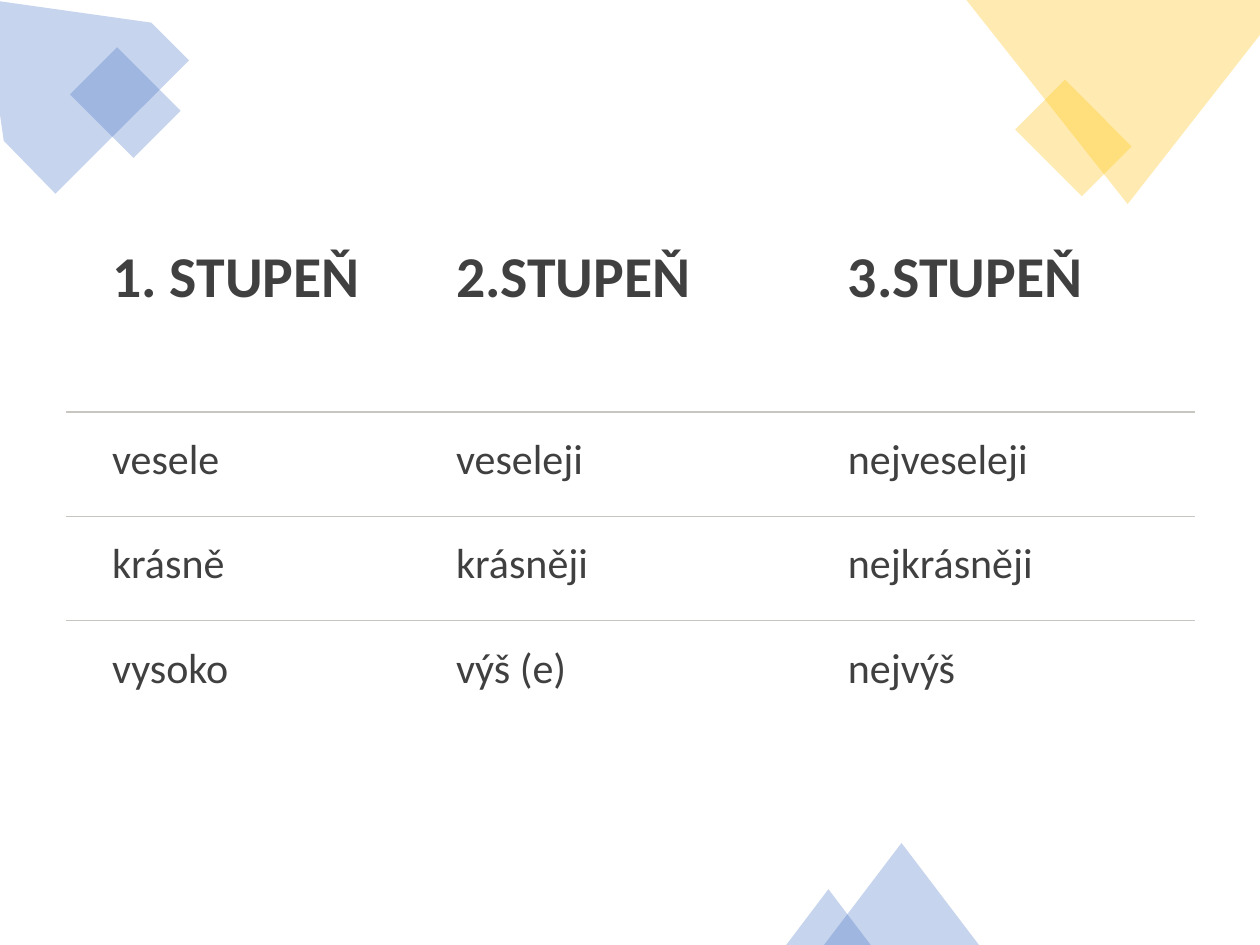
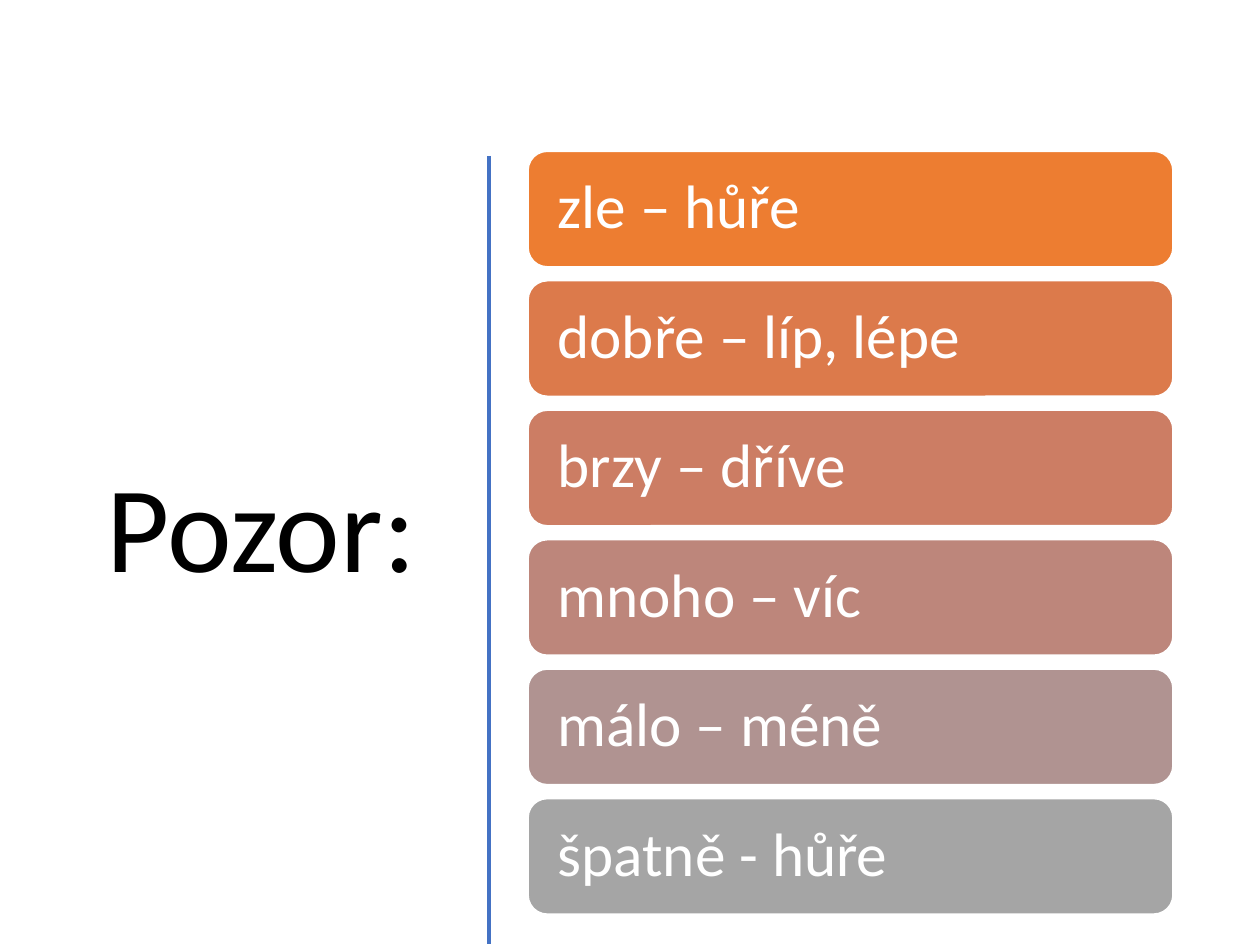
from lxml import etree
from pptx import Presentation
from pptx.dml.color import RGBColor
from pptx.enum.shapes import MSO_CONNECTOR, MSO_SHAPE
from pptx.enum.text import MSO_ANCHOR, PP_ALIGN
from pptx.oxml.ns import qn
from pptx.util import Inches, Pt

SLIDE_WIDTH, SLIDE_HEIGHT = Inches(10), Inches(7.5)
BLANK_LAYOUT = 6
FONT = "Calibri"

BLUE = RGBColor(0x44, 0x72, 0xC4)
GOLD = RGBColor(0xFF, 0xC0, 0x00)
INK = RGBColor(0x40, 0x40, 0x40)
RULE = RGBColor(0xC7, 0xC6, 0xC1)
BLACK = RGBColor(0x00, 0x00, 0x00)
WHITE = RGBColor(0xFF, 0xFF, 0xFF)

RECTANGLE = MSO_SHAPE.RECTANGLE
TRIANGLE = MSO_SHAPE.ISOSCELES_TRIANGLE
ROUNDED = MSO_SHAPE.ROUNDED_RECTANGLE
STRAIGHT = MSO_CONNECTOR.STRAIGHT
MIDDLE = MSO_ANCHOR.MIDDLE
LEFT, RIGHT = PP_ALIGN.LEFT, PP_ALIGN.RIGHT

DEGREES = [
    ["1. STUPEŇ", "2.STUPEŇ", "3.STUPEŇ"],
    ["vesele", "veseleji", "nejveseleji"],
    ["krásně", "krásněji", "nejkrásněji"],
    ["vysoko", "výš (e)", "nejvýš"],
]
EXCEPTIONS = [
    ("zle – hůře", RGBColor(0xED, 0x7D, 0x31)),
    ("dobře – líp, lépe", RGBColor(0xDC, 0x7A, 0x4B)),
    ("brzy – dříve", RGBColor(0xCC, 0x7D, 0x64)),
    ("mnoho – víc", RGBColor(0xBD, 0x86, 0x7B)),
    ("málo – méně", RGBColor(0xB0, 0x93, 0x91)),
    ("špatně - hůře", RGBColor(0xA5, 0xA5, 0xA5)),
]


def across(percent):
    """Length as a percentage of the slide width."""
    return round(SLIDE_WIDTH * percent / 100)


def down(percent):
    """Length as a percentage of the slide height."""
    return round(SLIDE_HEIGHT * percent / 100)


def place(left, top, width, height):
    return across(left), down(top), across(width), down(height)


def write(text_frame, text, size, color, align=LEFT, bold=False, spacing=None):
    text_frame.text = text
    paragraph = text_frame.paragraphs[0]
    paragraph.alignment = align
    paragraph.line_spacing = spacing
    font = paragraph.runs[0].font
    font.name, font.size, font.bold = FONT, Pt(size), bold
    font.color.rgb = color


def tint(shape, color):
    """Fill a decoration with a see-through colour and no outline."""
    shape.shadow.inherit = False
    shape.line.fill.background()
    shape.fill.solid()
    shape.fill.fore_color.rgb = color
    color_node = shape.fill._xPr.find(".//" + qn("a:srgbClr"))
    etree.SubElement(color_node, qn("a:alpha")).set("val", "30000")


def add_decoration(slide, kind, box, color, rotation=0):
    shape = slide.shapes.add_shape(kind, *place(*box))
    shape.rotation = rotation
    tint(shape, color)


def add_corner(slide, points, color):
    (start_x, start_y), *others = [(across(x), down(y)) for x, y in points]
    builder = slide.shapes.build_freeform(start_x, start_y)
    builder.add_line_segments(others, close=True)
    tint(builder.convert_to_shape(), color)


def add_rule(cell, side, position):
    """Draw a thin line on one side (lnT or lnB) of a table cell."""
    line = etree.Element(qn("a:" + side), w=str(Pt(0.75)))
    fill = etree.SubElement(line, qn("a:solidFill"))
    etree.SubElement(fill, qn("a:srgbClr")).set("val", str(RULE))
    cell._tc.get_or_add_tcPr().insert(position, line)


def add_degree_table(slide, rows, box, column_widths, row_heights):
    frame = slide.shapes.add_table(len(rows), len(rows[0]), *place(*box))
    table = frame.table
    table.first_row = table.horz_banding = False
    for column, width in zip(table.columns, column_widths):
        column.width = across(width)
    for row, height in zip(table.rows, row_heights):
        row.height = down(height)
    for row_index, words in enumerate(rows):
        is_header = row_index == 0
        for column_index, word in enumerate(words):
            cell = table.cell(row_index, column_index)
            cell.fill.background()
            cell.margin_left, cell.margin_right = across(3.6), across(2.7)
            cell.margin_top = cell.margin_bottom = down(2.4)
            write(cell.text_frame, word, 33 if is_header else 24, INK, bold=is_header)
            if row_index < len(rows) - 1:
                add_rule(cell, "lnB", 0)
            if not is_header:
                add_rule(cell, "lnT", 0)


def add_title(slide, text, box):
    text_frame = slide.shapes.add_textbox(*place(*box)).text_frame
    text_frame.word_wrap = True
    text_frame.vertical_anchor = MIDDLE
    write(text_frame, text, 70, BLACK, RIGHT, spacing=0.9)


def add_divider(slide, x, top, bottom):
    line = slide.shapes.add_connector(
        STRAIGHT, across(x), down(top), across(x), down(bottom))
    line.line.color.rgb = BLUE
    line.line.width = Pt(2)
    etree.SubElement(line._element.spPr, qn("a:effectLst"))


def add_card(slide, text, color, box):
    card = slide.shapes.add_shape(ROUNDED, *place(*box))
    card.shadow.inherit = False
    card.fill.solid()
    card.fill.fore_color.rgb = color
    card.line.color.rgb = WHITE
    card.line.width = Pt(1)
    text_frame = card.text_frame
    text_frame.word_wrap = True
    text_frame.vertical_anchor = MIDDLE
    text_frame.margin_left = text_frame.margin_right = across(1.9)
    write(text_frame, text, 35, WHITE, spacing=0.9)


def build_degrees_slide(slide):
    # Corner and bottom decorations
    add_corner(slide, [(12, 2.4), (-1.3, -0.1), (0.3, 14.9), (4.4, 20.5), (15, 6.4)], BLUE)
    add_decoration(slide, RECTANGLE, (7.3, 6.1, 5.3, 9.5), BLUE, 315)
    add_decoration(slide, RECTANGLE, (82.4, 9.6, 5.6, 10), GOLD, 315)
    add_corner(slide, [(76.7, 0), (100, 0), (100, 3.7), (89.5, 21.6)], GOLD)
    add_decoration(slide, TRIANGLE, (65.4, 89.2, 12.3, 10.8), BLUE)
    add_decoration(slide, TRIANGLE, (62.4, 94.1, 6.7, 5.9), BLUE)
    # Comparison table
    add_degree_table(slide, DEGREES, (5.3, 23.3, 89.4, 53.4),
                     [27.3, 31.1, 31.1], [20.3] + [11.03] * 3)


def build_exceptions_slide(slide):
    add_title(slide, "Pozor: ", (3.9, 15.6, 32.3, 81.5))
    add_divider(slide, 38.8, 16.5, 99.9)
    # Evenly spaced cards
    first_top, last_top = 16, 84.5
    pitch = (last_top - first_top) / (len(EXCEPTIONS) - 1)
    for index, (text, color) in enumerate(EXCEPTIONS):
        add_card(slide, text, color, (41.9, first_top + index * pitch, 51.2, 12.25))


def main():
    presentation = Presentation()
    presentation.slide_width, presentation.slide_height = SLIDE_WIDTH, SLIDE_HEIGHT
    for build in (build_degrees_slide, build_exceptions_slide):
        build(presentation.slides.add_slide(presentation.slide_layouts[BLANK_LAYOUT]))
    presentation.save("out.pptx")


if __name__ == "__main__":
    main()
